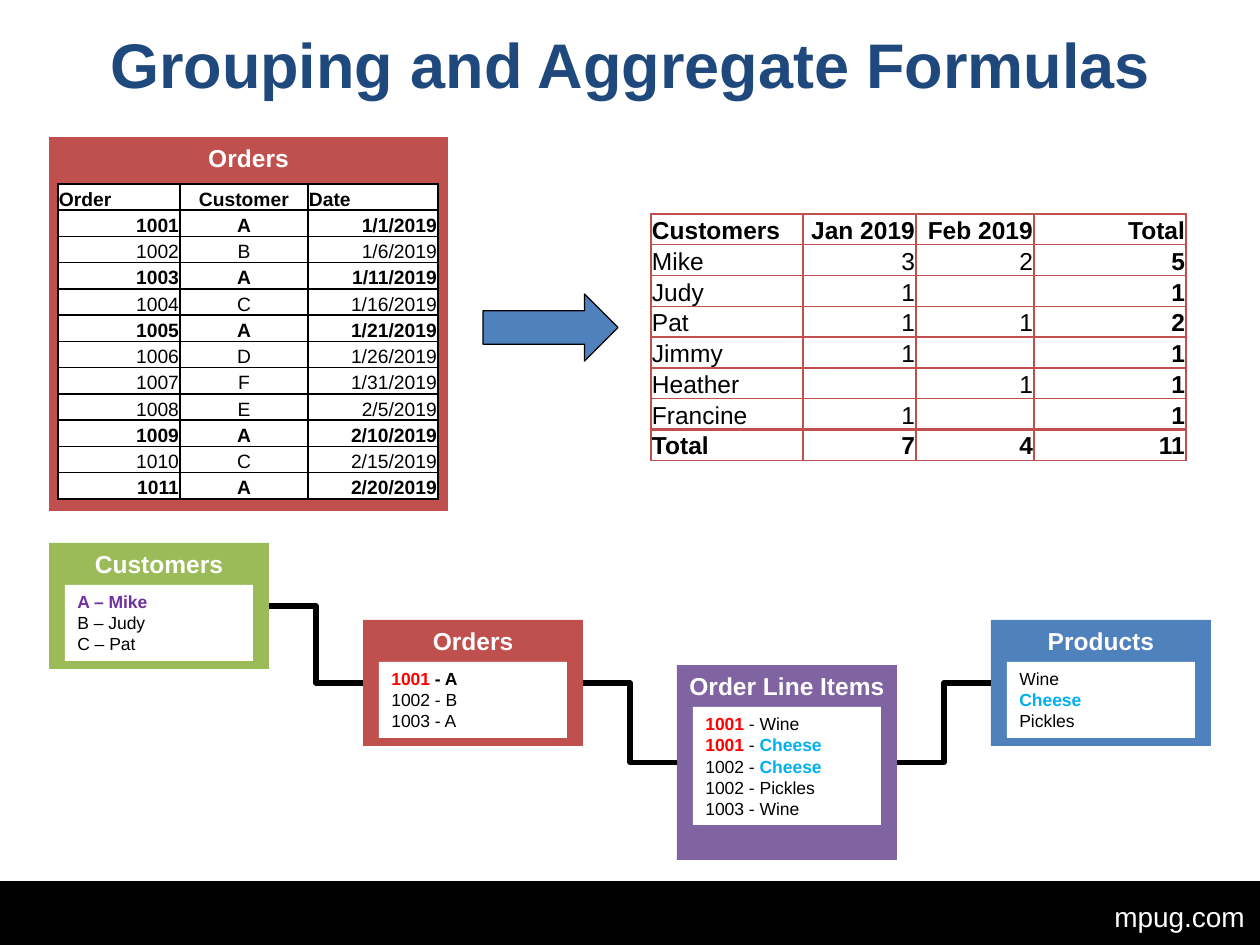
from dataclasses import dataclass

from lxml import etree
from pptx import Presentation
from pptx.dml.color import RGBColor
from pptx.enum.shapes import MSO_CONNECTOR, MSO_SHAPE
from pptx.enum.text import MSO_ANCHOR, MSO_AUTO_SIZE, PP_ALIGN
from pptx.oxml.ns import qn
from pptx.util import Pt

RECT, ARROW = MSO_SHAPE.RECTANGLE, MSO_SHAPE.RIGHT_ARROW
ELBOW = MSO_CONNECTOR.ELBOW
LEFT, CENTER, RIGHT = PP_ALIGN.LEFT, PP_ALIGN.CENTER, PP_ALIGN.RIGHT
TOP, MIDDLE, BOTTOM = MSO_ANCHOR.TOP, MSO_ANCHOR.MIDDLE, MSO_ANCHOR.BOTTOM
RIGHT_SIDE, LEFT_SIDE = 3, 1


@dataclass(frozen=True)
class Theme:
    font: str = "Arial"
    black: str = "000000"
    white: str = "FFFFFF"
    navy: str = "1F497D"
    red: str = "C0504D"
    green: str = "9BBB59"
    purple: str = "8064A2"
    blue: str = "4F81BD"
    customer_key: str = "7030A0"
    order_key: str = "FF0000"
    product_key: str = "00B0F0"
    title_size: int = 36
    footer_size: int = 16
    heading_size: int = 14
    orders_size: int = 11
    list_size: int = 10


THEME = Theme()

# Content
TITLE = "Grouping and Aggregate Formulas"
FOOTER = "mpug.com"
ORDERS = [
    ("Order", "Customer", "Date"),
    ("1001", "A", "1/1/2019"),
    ("1002", "B", "1/6/2019"),
    ("1003", "A", "1/11/2019"),
    ("1004", "C", "1/16/2019"),
    ("1005", "A", "1/21/2019"),
    ("1006", "D", "1/26/2019"),
    ("1007", "F", "1/31/2019"),
    ("1008", "E", "2/5/2019"),
    ("1009", "A", "2/10/2019"),
    ("1010", "C", "2/15/2019"),
    ("1011", "A", "2/20/2019"),
]
SUMMARY = [
    ("Customers", "Jan 2019", "Feb 2019", "Total"),
    ("Mike", "3", "2", "5"),
    ("Judy", "1", "", "1"),
    ("Pat", "1", "1", "2"),
    ("Jimmy", "1", "", "1"),
    ("Heather", "", "1", "1"),
    ("Francine", "1", "", "1"),
    ("Total", "7", "4", "11"),
]
# A line is plain text or a list of (text, colour, bold) runs
CHEESE = ("Cheese", THEME.product_key, True)
ORDER_1001 = ("1001", THEME.order_key, True)
ENTITIES = [  # name, fill, top, height, list height, lines
    ("Customers", THEME.green, 543, 126, 76,
     [[("A – Mike", THEME.customer_key, True)], "B – Judy", "C – Pat"]),
    ("Orders", THEME.red, 620, 126, 76,
     [[("1001 ", THEME.order_key, True), ("- A", THEME.black, True)], "1002 - B", "1003 - A"]),
    ("Order Line Items", THEME.purple, 665, 195, 118,
     [[ORDER_1001, (" - Wine", THEME.black, False)],
      [ORDER_1001, (" - ", THEME.black, False), CHEESE],
      [("1002 - ", THEME.black, False), CHEESE],
      "1002 - Pickles", "1003 - Wine"]),
    ("Products", THEME.blue, 620, 126, 76, ["Wine", [CHEESE], "Pickles"]),
]
ENTITY_LEFT, ENTITY_STEP, ENTITY_WIDTH = 49, 314, 220
LIST_INSET, LIST_DROP = 16, 42


def px(length):
    return round(length * 914400 / 126)


def rgb(colour):
    return RGBColor.from_string(colour)


def write_text(frame, lines, size, colour=THEME.black, bold=False, align=LEFT,
               anchor=TOP, wrap=True):
    frame.word_wrap = wrap
    frame.auto_size = MSO_AUTO_SIZE.NONE
    frame.vertical_anchor = anchor
    for number, line in enumerate(lines):
        paragraph = frame.paragraphs[0] if number == 0 else frame.add_paragraph()
        paragraph.alignment = align
        for text, run_colour, run_bold in [(line, colour, bold)] if isinstance(line, str) else line:
            run = paragraph.add_run()
            run.text = text
            run.font.name, run.font.size, run.font.bold = THEME.font, Pt(size), run_bold
            run.font.color.rgb = rgb(run_colour)


def add_block(shapes, kind, left, top, width, height, fill, line=None):
    block = shapes.add_shape(kind, px(left), px(top), px(width), px(height))
    block.shadow.inherit = False
    block.fill.solid()
    block.fill.fore_color.rgb = rgb(fill)
    if line:
        block.line.color.rgb = rgb(line)
        block.line.width = Pt(0.75)
    else:
        block.line.fill.background()
    return block


def add_panel(shapes, name, left, top, width, height, fill):
    panel = add_block(shapes, RECT, left, top, width, height, fill)
    panel.text_frame.margin_left = panel.text_frame.margin_right = 0
    write_text(panel.text_frame, [name], THEME.heading_size, THEME.white, bold=True, align=CENTER)
    return panel


def set_borders(cell, colour, top_width=1):
    properties = cell._tc.get_or_add_tcPr()
    for side, width in (("L", 1), ("R", 1), ("T", top_width), ("B", 1)):
        border = etree.SubElement(properties, qn("a:ln" + side), w=str(Pt(width)))
        fill = etree.SubElement(border, qn("a:solidFill"))
        etree.SubElement(fill, qn("a:srgbClr"), val=colour)


def add_grid(shapes, rows, left, top, widths, height, size, border, align_of, bold_of, total=False):
    table = shapes.add_table(len(rows), len(widths), px(left), px(top),
                             px(sum(widths)), px(height)).table
    table.first_row = table.horz_banding = False
    for column, width in zip(table.columns, widths):
        column.width = px(width)
    for r, values in enumerate(rows):
        table.rows[r].height = px(height / len(rows))
        for c, value in enumerate(values):
            cell = table.cell(r, c)
            cell.margin_left = cell.margin_right = cell.margin_top = px(1)
            cell.margin_bottom = 0
            cell.vertical_anchor = BOTTOM
            set_borders(cell, border, 2 if total and r == len(rows) - 1 else 1)
            cell.fill.solid()
            cell.fill.fore_color.rgb = rgb(THEME.white)
            if value:
                write_text(cell.text_frame, [value], size, bold=bold_of(r, c),
                           align=align_of(r, c), anchor=None, wrap=None)
            else:  # keeps an empty cell from stretching its row
                etree.SubElement(cell.text_frame.paragraphs[0]._p, qn("a:endParaRPr"),
                                 sz=str(size * 100))


def join(shapes, start, end):
    link = shapes.add_connector(ELBOW, 0, 0, 0, 0)
    link.begin_connect(start, RIGHT_SIDE)
    link.end_connect(end, LEFT_SIDE)
    link.line.color.rgb = rgb(THEME.black)
    link.line.width = Pt(3)
    etree.SubElement(link._element.spPr, qn("a:effectLst"))


def main():
    deck = Presentation()
    deck.slide_width, deck.slide_height = px(1260), px(945)
    slide = deck.slides.add_slide(deck.slide_layouts[5])
    shapes = slide.shapes

    # Title and footer
    title = shapes.title
    title.left, title.top, title.width, title.height = px(32), px(21), px(1197), px(84)
    write_text(title.text_frame, [TITLE], THEME.title_size, THEME.navy, bold=True,
               align=CENTER, anchor=MIDDLE)
    add_block(shapes, RECT, 0, 882, 1260, 63, THEME.black, THEME.black)
    footer = shapes.add_textbox(px(1102), px(893), px(158), px(47))
    write_text(footer.text_frame, [FOOTER], THEME.footer_size, THEME.white, wrap=False)

    # Related entities, joined left to right
    panels = []
    for number, (name, fill, top, height, list_height, lines) in enumerate(ENTITIES):
        left = ENTITY_LEFT + number * ENTITY_STEP
        panels.append(add_panel(shapes, name, left, top, ENTITY_WIDTH, height, fill))
        members = add_block(shapes, RECT, left + LIST_INSET, top + LIST_DROP,
                            ENTITY_WIDTH - 2 * LIST_INSET, list_height, THEME.white)
        write_text(members.text_frame, lines, THEME.list_size, anchor=MIDDLE)
    for start, end in zip(panels, panels[1:]):
        join(shapes, start, end)

    # Orders table, with customer A in bold
    add_panel(shapes, "Orders", 49, 137, 399, 374, THEME.red)
    add_grid(shapes, ORDERS, 58, 184, (122, 128, 130), 315, THEME.orders_size, THEME.black,
             align_of=lambda r, c: CENTER if c == 1 else RIGHT if r else LEFT,
             bold_of=lambda r, c: r == 0 or ORDERS[r][1] == "A")

    # Arrow to the grouped summary
    add_block(shapes, ARROW, 483, 294, 135, 67, THEME.blue, THEME.black)
    add_grid(shapes, SUMMARY, 651, 214, (152, 113, 118, 152), 246, THEME.heading_size, THEME.red,
             align_of=lambda r, c: RIGHT if c else LEFT,
             bold_of=lambda r, c: r in (0, len(SUMMARY) - 1) or c == 3, total=True)

    deck.save("out.pptx")


if __name__ == "__main__":
    main()
